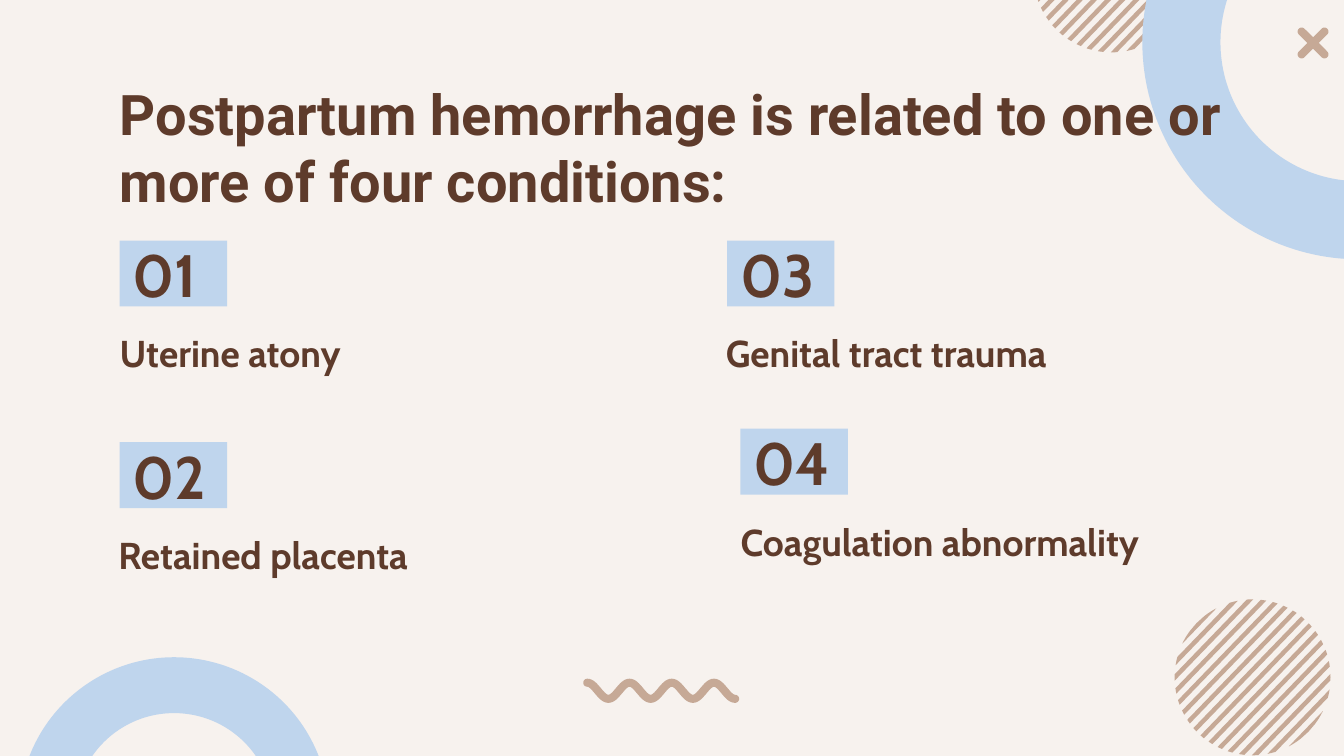
import math
from dataclasses import dataclass
from pptx import Presentation
from pptx import util as u
from pptx.dml.color import RGBColor
from pptx.enum import shapes, text
from pptx.oxml.xmlchemy import OxmlElement

COLORS = {"paper": "F7F2EE", "blue": "BFD5ED", "tan": "C6A996", "brown": "5E3B2B"}
Point = tuple[float, float]


@dataclass
class Condition:
    number: str
    label: str
    tile: Point
    box: tuple[float, float, float]


@dataclass
class Ring:
    left: float
    top: float
    size: float


@dataclass
class StripedDisc:
    cx: float
    cy: float
    radius: float = 0.58


CONDITIONS = [
    Condition("01", "Uterine atony", (0.89, 1.79), (0.79, 2.36, 2.52)),
    Condition("02", "Retained placenta", (0.89, 3.29), (0.78, 3.86, 2.52)),
    Condition("03", "Genital tract trauma", (5.41, 1.79), (5.3, 2.36, 2.98)),
    Condition("04", "Coagulation abnormality", (5.51, 3.19), (5.41, 3.76, 3.39)),
]


def rgb(name: str) -> RGBColor:
    return RGBColor.from_string(COLORS[name])


def paint(sp, color: str) -> None:
    sp.fill.solid()
    sp.fill.fore_color.rgb = rgb(color)
    sp.line.fill.background()
    sp.shadow.inherit = False


def place(sp, left: float, top: float, width: float, height: float) -> None:
    sp.left, sp.top = u.Inches(left), u.Inches(top)
    sp.width, sp.height = u.Inches(width), u.Inches(height)


def write(sp, content: str, font: str, size: int, anchor) -> None:
    tf = sp.text_frame
    tf.text = content
    tf.word_wrap = True
    tf.auto_size = text.MSO_AUTO_SIZE.NONE
    tf.vertical_anchor = anchor
    tf.margin_left = tf.margin_right = tf.margin_top = tf.margin_bottom = u.Inches(0.1)
    p = tf.paragraphs[0]
    p.alignment = text.PP_ALIGN.LEFT
    p.space_before = u.Pt(0)
    p.font.name, p.font.size, p.font.bold = font, u.Pt(size), True
    p.font.color.rgb = rgb("brown")


def remove_bullet(sp) -> None:
    props = sp.text_frame.paragraphs[0]._p.get_or_add_pPr()
    props.set("marL", "0")
    props.set("indent", "0")
    bullet = OxmlElement("a:buNone")
    props.find("{*}spcBef").addnext(bullet)


def bring_to_front(sp) -> None:
    sp.element.getparent().append(sp.element)


def draw_outline(s, points: list[Point]) -> None:
    pts = [(u.Inches(x), u.Inches(y)) for x, y in points]
    builder = s.shapes.build_freeform(*pts[0])
    builder.add_line_segments(pts[1:], close=True)
    paint(builder.convert_to_shape(), "tan")


def draw_ring(s, ring: Ring) -> None:
    sp = s.shapes.add_shape(shapes.MSO_SHAPE.DONUT, 0, 0, 0, 0)
    place(sp, ring.left, ring.top, ring.size, ring.size)
    sp.adjustments[0] = 0.18
    paint(sp, "blue")


def draw_striped_disc(s, disc: StripedDisc) -> None:
    count, steps = 16, 6
    pitch = 1.21 / count
    width = 0.44 * pitch
    nx, ny = math.cos(math.radians(44)), math.sin(math.radians(44))

    def edge_point(offset: float, side: int) -> Point:
        half = side * math.sqrt(max(0, disc.radius**2 - offset**2))
        return disc.cx + offset * nx + half * ny, disc.cy + offset * ny - half * nx

    for i in range(count):
        middle = (i - (count - 1) / 2) * pitch
        low = max(-disc.radius, middle - width / 2)
        high = min(disc.radius, middle + width / 2)
        offsets = [low + (high - low) * k / steps for k in range(steps + 1)]
        points = [edge_point(d, 1) for d in offsets]
        points += [edge_point(d, -1) for d in reversed(offsets)]
        if max(y for _, y in points) > 0:
            draw_outline(s, points)


def draw_cross(s, cx: float, cy: float) -> None:
    reach, half = 0.12, 0.03
    points = []
    for arm in range(45, 405, 90):
        a = math.radians(arm)
        for turn in range(-90, 91, 15):
            b = math.radians(arm + turn)
            points.append((cx + reach * math.cos(a) + half * math.cos(b),
                           cy + reach * math.sin(a) + half * math.sin(b)))
        corner = math.radians(arm + 45)
        inner = half * math.sqrt(2)
        points.append((cx + inner * math.cos(corner), cy + inner * math.sin(corner)))
    draw_outline(s, points)


def draw_wave(s, left: float, right: float, cy: float) -> None:
    amplitude, half, cycles, steps = 0.06, 0.03, 3.5, 112
    rate = 2 * math.pi * cycles / (right - left)
    upper, lower = [], []
    for k in range(steps + 1):
        dx = (right - left) * k / steps
        x, y = left + dx, cy - amplitude * math.cos(rate * dx)
        a = math.atan(amplitude * rate * math.sin(rate * dx))
        ox, oy = half * math.sin(a), -half * math.cos(a)
        upper.append((x + ox, y + oy))
        lower.append((x - ox, y - oy))

    def cap(x: float, y: float, start: int) -> list[Point]:
        angles = [math.radians(start + t) for t in range(15, 180, 15)]
        return [(x + half * math.cos(a), y + half * math.sin(a)) for a in angles]

    draw_outline(s, upper + cap(right, cy + amplitude, -90)
                 + lower[::-1] + cap(left, cy - amplitude, 90))


def draw_condition(s, item: Condition, body) -> None:
    tile = s.shapes.add_shape(shapes.MSO_SHAPE.RECTANGLE, 0, 0, 0, 0)
    place(tile, *item.tile, 0.8, 0.49)
    paint(tile, "blue")
    write(tile, item.number, "Cabin", 32, text.MSO_ANCHOR.MIDDLE)
    place(body, *item.box, 0.7)
    write(body, item.label, "Cabin", 20, text.MSO_ANCHOR.TOP)
    remove_bullet(body)
    bring_to_front(body)


def main() -> None:
    prs = Presentation()
    prs.slide_width = u.Inches(10)
    prs.slide_height = prs.slide_width * 9 // 16
    s = prs.slides.add_slide(prs.slide_layouts.get_by_name("Comparison"))
    s.background.fill.solid()
    s.background.fill.fore_color.rgb = rgb("paper")
    title, *bodies = list(s.placeholders)

    draw_cross(s, 9.77, 0.32)
    draw_striped_disc(s, StripedDisc(8.27, -0.19))
    draw_ring(s, Ring(8.5, -1.3, 3.23))

    place(title, 0.79, 0.49, 8.43, 0.63)
    write(title, "Postpartum hemorrhage is related to one or more of four conditions:",
          "Roboto", 30, text.MSO_ANCHOR.TOP)
    bring_to_front(title)
    for item, body in zip(CONDITIONS, bodies):
        draw_condition(s, item, body)

    draw_ring(s, Ring(0.14, 4.89, 2.31))
    draw_striped_disc(s, StripedDisc(9.32, 5.04))
    draw_wave(s, 4.37, 5.47, 5.14)
    prs.save("out.pptx")


if __name__ == "__main__":
    main()
